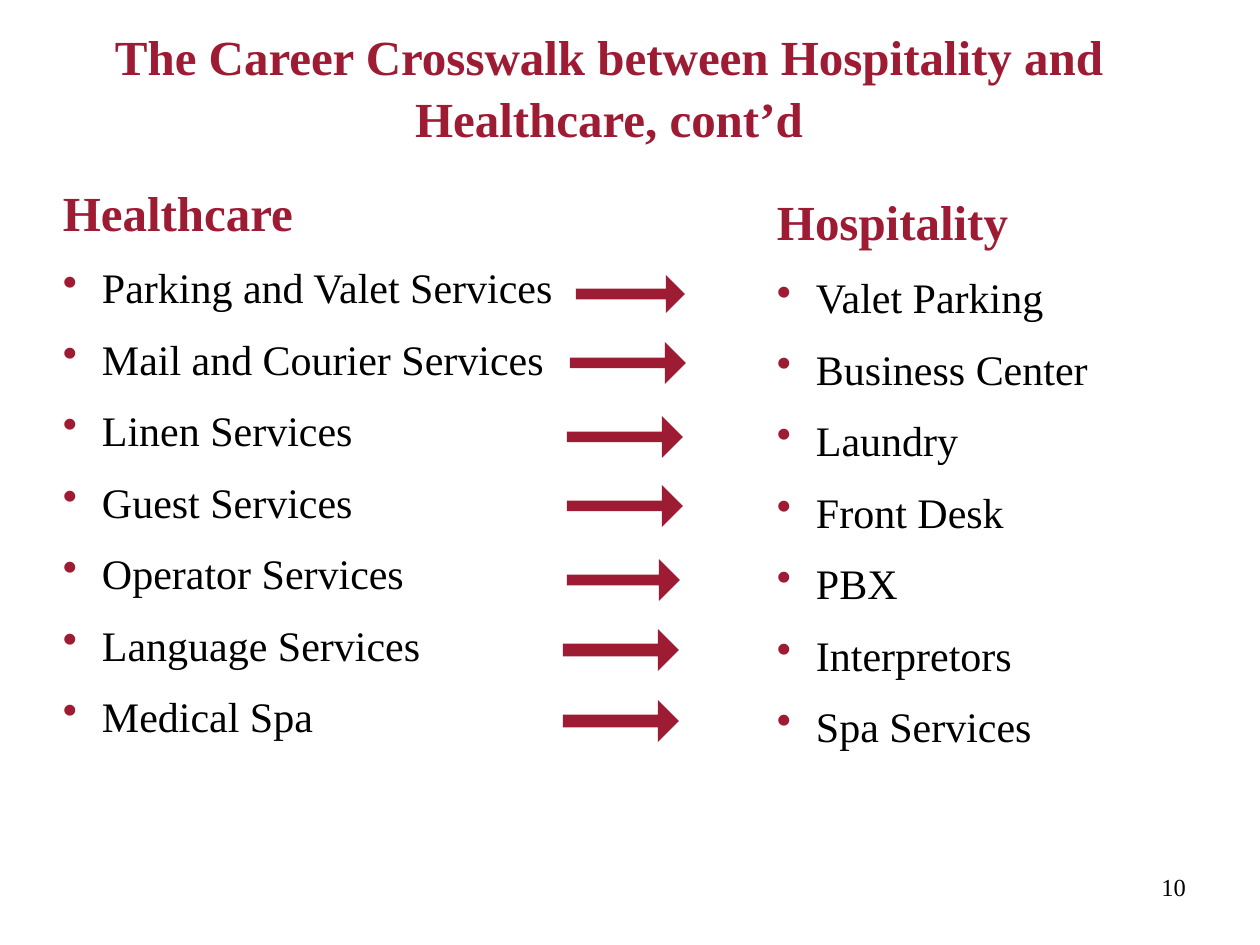
from lxml import etree
from pptx import Presentation
from pptx.dml.color import RGBColor
from pptx.enum.shapes import MSO_SHAPE
from pptx.enum.text import MSO_ANCHOR, PP_ALIGN
from pptx.oxml.ns import qn
from pptx.util import Pt

CENTER, RIGHT = PP_ALIGN.CENTER, PP_ALIGN.RIGHT
TOP, MIDDLE = MSO_ANCHOR.TOP, MSO_ANCHOR.MIDDLE
ARROW = MSO_SHAPE.RIGHT_ARROW
RED, BLACK = "9E1B34", "000000"
INDENT = 39


def px(n):
    return round(n * 914400 / 126)


def color(code):
    return RGBColor.from_string(code)


class Deck:
    font = "Times New Roman"

    def __init__(self):
        self.prs = Presentation()
        self.prs.slide_width, self.prs.slide_height = px(1260), px(945)
        self.slide = self.prs.slides.add_slide(self.prs.slide_layouts[6])

    def frame(self, x, y, w, h, anchor=TOP):
        box = self.slide.shapes.add_textbox(px(x), px(y), px(w), px(h))
        form = {"word_wrap": True, "vertical_anchor": anchor, "margin_left": 0,
                "margin_right": 0, "margin_top": 0, "margin_bottom": 0}
        for key, value in form.items():
            setattr(box.text_frame, key, value)
        return box.text_frame

    def line(self, para, text, size, ink, bold=False, **form):
        para.text = text
        for key, value in form.items():
            setattr(para, key, value)
        font = para.runs[0].font
        for key, value in {"name": self.font, "size": Pt(size), "bold": bold}.items():
            setattr(font, key, value)
        font.color.rgb = color(ink)

    def label(self, area, text, size, ink, bold=False, anchor=TOP, **form):
        self.line(self.frame(*area, anchor).paragraphs[0], text, size, ink, bold, **form)

    def bullet(self, para):
        props = para._p.get_or_add_pPr()
        props.set("marL", str(px(INDENT)))
        props.set("indent", str(-px(INDENT)))
        tint = etree.SubElement(props, qn("a:buClr"))
        etree.SubElement(tint, qn("a:srgbClr")).set("val", RED)
        etree.SubElement(props, qn("a:buChar")).set("char", "•")

    def column(self, area, head, items):
        frame = self.frame(*area)
        self.line(frame.paragraphs[0], head, 28, RED, True, space_after=Pt(6))
        for item in items:
            para = frame.add_paragraph()
            self.bullet(para)
            self.line(para, item, 24, BLACK, space_before=Pt(6), space_after=Pt(6))

    def arrow(self, x, y, w, h, shaft):
        shape = self.slide.shapes.add_shape(ARROW, px(x), px(y), px(w), px(h))
        shape.shadow.inherit = False
        shape.adjustments[0] = shaft
        shape.adjustments[1] = 0.5
        shape.fill.solid()
        shape.fill.fore_color.rgb = color(RED)
        shape.line.fill.background()


def main():
    deck = Deck()

    # Paired lists
    deck.column((63, 182, 514, 588), "Healthcare", [
        "Parking and Valet Services", "Mail and Courier Services",
        "Linen Services", "Guest Services", "Operator Services",
        "Language Services", "Medical Spa"])
    deck.column((777, 192, 357, 598), "Hospitality", [
        "Valet Parking", "Business Center", "Laundry", "Front Desk",
        "PBX", "Interpretors", "Spa Services"])

    # Title and page number
    deck.label((42, 35, 1134, 101),
               "The Career Crosswalk between Hospitality and Healthcare, cont’d",
               28, RED, True, MIDDLE, alignment=CENTER, line_spacing=1.05)
    deck.label((1102, 872, 84, 32), "10", 14, BLACK, alignment=RIGHT)

    # Arrows from each service to its match
    for x, y, w, h, shaft in [
            (576, 275, 109, 38, 0.28), (570, 342, 116, 42, 0.25),
            (567, 416, 116, 42, 0.25), (567, 485, 116, 42, 0.25),
            (567, 559, 113, 42, 0.25), (563, 629, 116, 42, 0.3),
            (563, 700, 116, 42, 0.3)]:
        deck.arrow(x, y, w, h, shaft)

    deck.prs.save("out.pptx")


if __name__ == "__main__":
    main()
